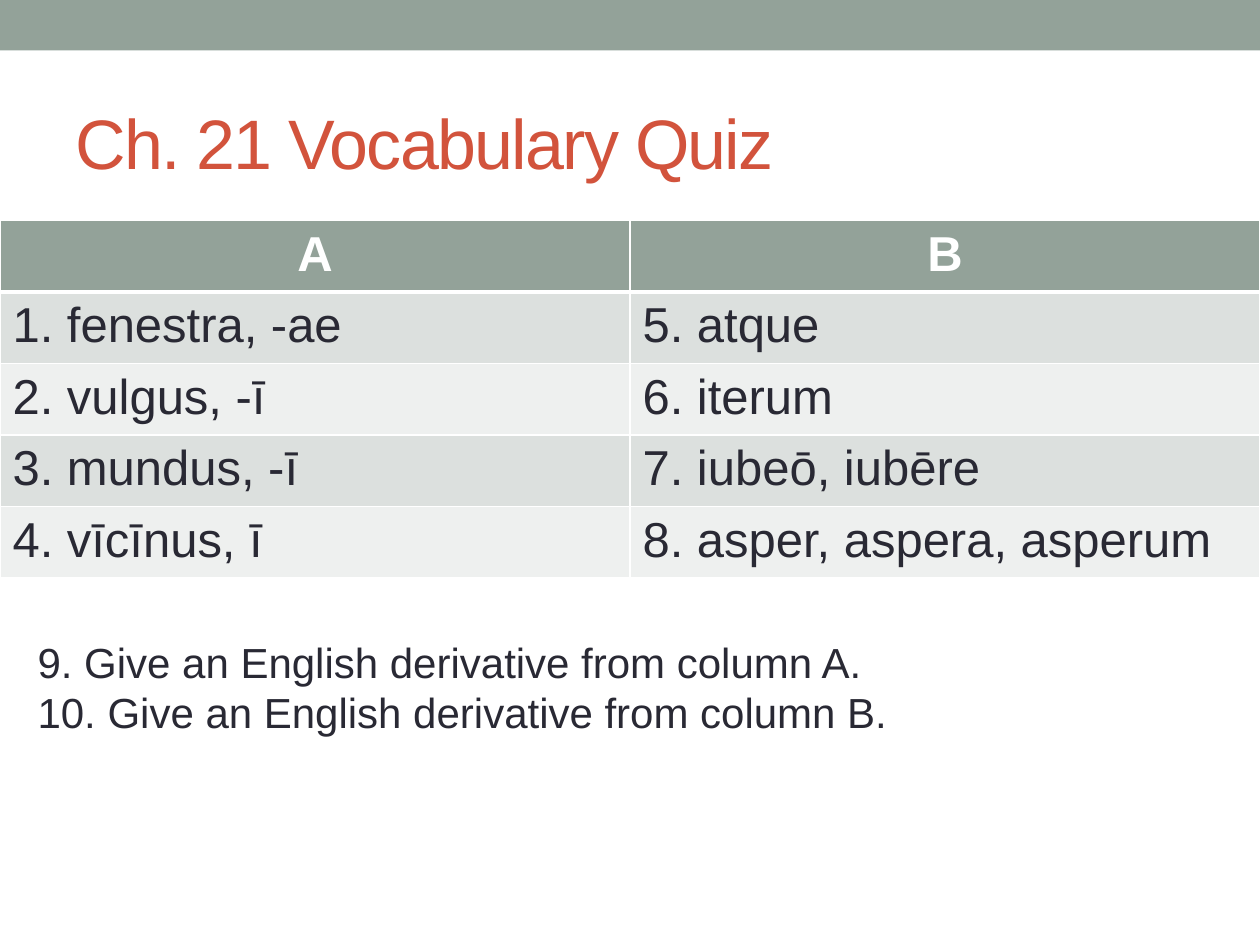
from lxml.etree import SubElement
from pptx import Presentation
from pptx.dml.color import RGBColor
from pptx.enum.shapes import MSO_SHAPE
from pptx.enum.text import MSO_ANCHOR, PP_ALIGN
from pptx.oxml.ns import qn
from pptx.util import Inches, Pt

SAGE = RGBColor(0x93, 0xA2, 0x99)
RUST = RGBColor(0xD2, 0x53, 0x3C)
INK = RGBColor(0x29, 0x29, 0x34)
WHITE = RGBColor(0xFF, 0xFF, 0xFF)
ODD_ROW = RGBColor(0xDC, 0xE0, 0xDE)
EVEN_ROW = RGBColor(0xEE, 0xF0, 0xEF)

VOCABULARY = [
    ("A", "B"),
    ("1. fenestra, -ae", "5. atque"),
    ("2. vulgus, -ī", "6. iterum"),
    ("3. mundus, -ī", "7. iubeō, iubēre"),
    ("4. vīcīnus, ī", "8. asper, aspera, asperum"),
]
QUESTIONS = [
    "9. Give an English derivative from column A.",
    "10. Give an English derivative from column B.",
]


def set_font(para, size, color, bold=False):
    """Style a whole paragraph."""
    para.font.name = "Arial"
    para.font.size = Pt(size)
    para.font.color.rgb = color
    para.font.bold = bold


def add_band(page, left, top, width, height):
    """Place the plain band across the top."""
    band = page.shapes.add_shape(MSO_SHAPE.RECTANGLE, left, top, width, height)
    band.shadow.inherit = False
    band.fill.solid()
    band.fill.fore_color.rgb = SAGE
    band.line.fill.background()


def add_text(page, lines, size, color, anchor, left, top, width, height):
    """Place a wrapped text box with one paragraph per line and return its frame."""
    frame = page.shapes.add_textbox(left, top, width, height).text_frame
    frame.word_wrap = True
    frame.vertical_anchor = anchor
    frame.text = "\n".join(lines)
    for para in frame.paragraphs:
        set_font(para, size, color)
    return frame


def add_title(page, left, top, width, height):
    """Place the tightly spaced slide title."""
    frame = add_text(page, ["Ch. 21 Vocabulary Quiz"], 40, RUST,
                     MSO_ANCHOR.MIDDLE, left, top, width, height)
    span = frame.paragraphs[0].runs[0]
    span.font._element.set("spc", "-100")


def set_borders(cell, bottom_width):
    """Draw white borders around a cell."""
    widths = {"a:lnL": 1, "a:lnR": 1, "a:lnT": 1, "a:lnB": bottom_width}
    properties = cell._tc.get_or_add_tcPr()
    for side, width in widths.items():
        line = SubElement(properties, qn(side), w=str(Pt(width)))
        fill = SubElement(line, qn("a:solidFill"))
        SubElement(fill, qn("a:srgbClr"), val=str(WHITE))


def add_vocabulary(page, left, top, width, height):
    """Place the two-column word table with a header row."""
    table = page.shapes.add_table(len(VOCABULARY), 2, left, top, width, height).table
    for row_index, words in enumerate(VOCABULARY):
        header = row_index == 0
        fill = SAGE if header else ODD_ROW if row_index % 2 else EVEN_ROW
        for column_index, word in enumerate(words):
            cell = table.cell(row_index, column_index)
            cell.text = word
            para = cell.text_frame.paragraphs[0]
            set_font(para, 28, WHITE if header else INK, header)
            para.alignment = PP_ALIGN.CENTER if header else PP_ALIGN.LEFT
            set_borders(cell, 3 if header else 1)
            cell.fill.solid()
            cell.fill.fore_color.rgb = fill


def main():
    """Build and save the quiz slide."""
    deck = Presentation()
    deck.slide_width, deck.slide_height = Inches(10), Inches(7.5)
    page = deck.slides.add_slide(deck.slide_layouts[6])
    add_band(page, 0, 0, deck.slide_width, Inches(0.4))
    add_title(page, Inches(0.5), Inches(0.58), Inches(9), Inches(1.08))
    add_vocabulary(page, 0, Inches(1.75), deck.slide_width, Inches(2.65))
    add_text(page, QUESTIONS, 24, INK, MSO_ANCHOR.TOP,
             Inches(0.2), Inches(5), Inches(9.8), Inches(0.91))
    deck.save("out.pptx")


if __name__ == "__main__":
    main()
